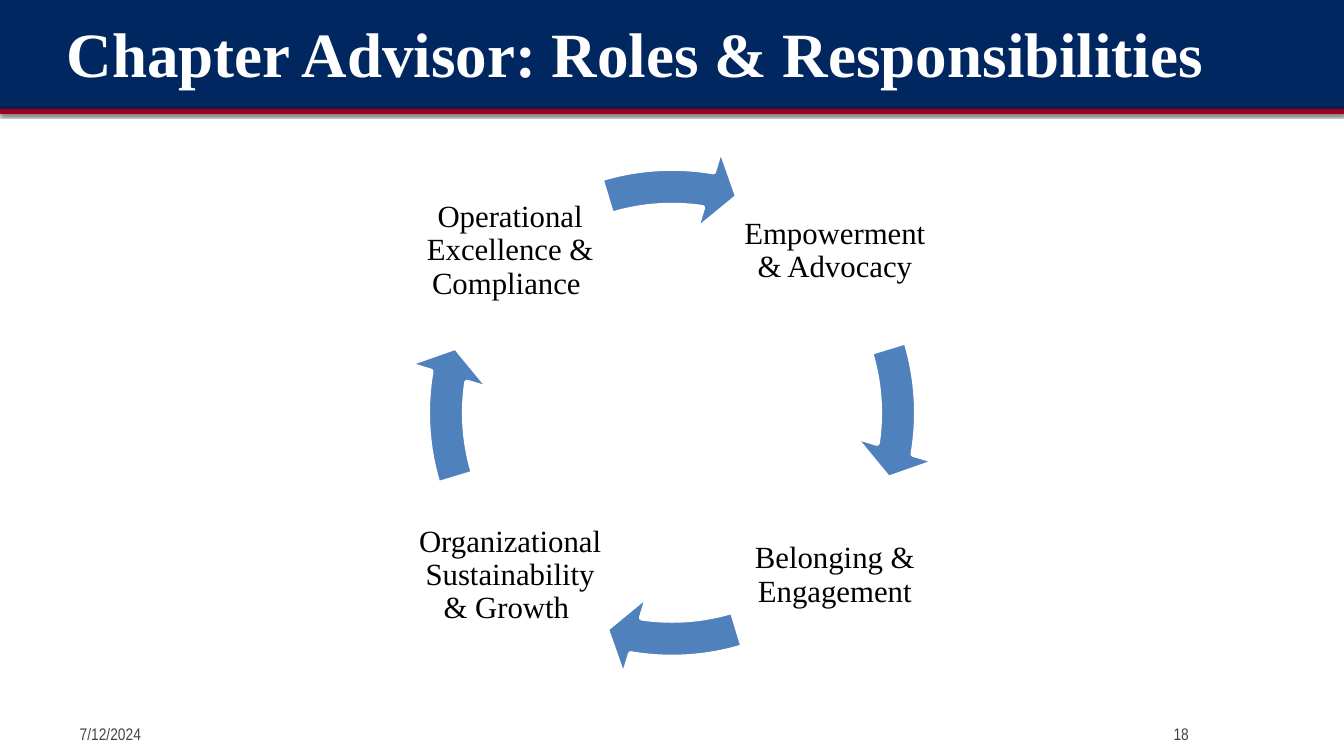
from lxml import etree
from pptx import Presentation
from pptx.dml.color import RGBColor
from pptx.enum import shapes, text
from pptx.oxml import ns
from pptx.util import Inches, Pt

NAVY = RGBColor(0x00, 0x27, 0x60)
RED = RGBColor(0xA0, 0x00, 0x1F)
BLUE = RGBColor(0x4F, 0x81, 0xBD)
GREY = RGBColor(0x45, 0x45, 0x45)
WHITE = RGBColor(0xFF, 0xFF, 0xFF)
BLACK = RGBColor(0x00, 0x00, 0x00)
SERIF, NARROW = "Times New Roman", "Arial Narrow"

HEADING = "Chapter Advisor: Roles & Responsibilities"
ROLES = [
    "Empowerment & Advocacy",
    "Belonging & Engagement",
    "Organizational Sustainability & Growth ",
    "Operational Excellence & Compliance ",
]
BANDS = [(0, 1.08, NAVY), (1.08, 0.05, RED)]
DATE, PAGE = "7/12/2024", "18"

SLIDE_W, SLIDE_H = 13.33, 7.5
RING_LEFT, RING_TOP, RING_SIZE = 3.99, 1.42, 5.35
ROLE_SIZE = 1.9
RIGHT, LEFT, UPPER, LOWER = 7.33, 4.11, 1.54, 4.76
ROLE_SPOTS = [(RIGHT, UPPER), (RIGHT, LOWER), (LEFT, LOWER), (LEFT, UPPER)]
QUARTER_TURN, FULL_TURN = 54, 216
HEAD_ANGLE, TAIL_ANGLE = 5.495, 205.852


def box(*lengths):
    return [Inches(length) for length in lengths]


def write(holder, words, *, size, color, font=SERIF, bold=False, spacing=1.0,
          align=text.PP_ALIGN.LEFT, anchor=text.MSO_ANCHOR.MIDDLE,
          insets=(0.03, 0.03, 0.03, 0.03)):
    """Put formatted words into a shape."""
    frame = holder.text_frame
    frame.word_wrap = True
    frame.auto_size = text.MSO_AUTO_SIZE.NONE
    frame.vertical_anchor = anchor
    (frame.margin_left, frame.margin_top,
     frame.margin_right, frame.margin_bottom) = box(*insets)
    paragraph = frame.paragraphs[0]
    paragraph.alignment = align
    paragraph.line_spacing = spacing
    run = paragraph.add_run()
    run.text = words
    run.font.name, run.font.size, run.font.bold = font, Pt(size), bold
    run.font.color.rgb = color


def add_band(slide, top, height, color):
    """Add a full-width band behind the heading."""
    band = slide.shapes.add_shape(shapes.MSO_SHAPE.RECTANGLE, *box(0, top, SLIDE_W, height))
    band.shadow.inherit = False
    band.fill.solid()
    band.fill.fore_color.rgb = color
    band.line.fill.background()
    slide.shapes.title.element.addprevious(band.element)
    return band


def cast_shadow(band):
    """Give a band a soft shadow below it."""
    effects = band.element.spPr.find(ns.qn("a:effectLst"))
    shadow = etree.SubElement(effects, ns.qn("a:outerShdw"), blurRad=str(Pt(2.5)),
                              dist=str(Pt(0.8)), dir="5400000", rotWithShape="0")
    tint = etree.SubElement(shadow, ns.qn("a:srgbClr"), val=str(BLACK))
    etree.SubElement(tint, ns.qn("a:alpha"), val="60000")


def add_cycle_arrow(slide, step):
    """Add the ring arrow that follows the given role."""
    arrow = slide.shapes.add_shape(shapes.MSO_SHAPE.CIRCULAR_ARROW,
                                   *box(RING_LEFT, RING_TOP, RING_SIZE, RING_SIZE))
    turn = step * QUARTER_TURN
    settings = (0.069, 4.653, HEAD_ANGLE + turn, (TAIL_ANGLE + turn) % FULL_TURN, 0.081)
    for index, setting in enumerate(settings):
        arrow.adjustments[index] = setting
    arrow.shadow.inherit = False
    arrow.fill.solid()
    arrow.fill.fore_color.rgb = BLUE
    arrow.line.color.rgb = WHITE
    arrow.line.width = Pt(3.78)


def main():
    """Build the advisor roles slide."""
    deck = Presentation()
    deck.slide_width, deck.slide_height = box(SLIDE_W, SLIDE_H)
    slide = deck.slides.add_slide(deck.slide_layouts[5])

    heading = slide.shapes.title
    heading.left, heading.top, heading.width, heading.height = box(0.56, 0, 12, 1.04)
    write(heading, HEADING, size=45, color=WHITE, bold=True, insets=(0.1, 0.05, 0.05, 0.05))

    bands = [add_band(slide, *band) for band in BANDS]
    cast_shadow(bands[-1])

    for step, (role, spot) in enumerate(zip(ROLES, ROLE_SPOTS)):
        label = slide.shapes.add_textbox(*box(*spot, ROLE_SIZE, ROLE_SIZE))
        write(label, role, size=22, color=BLACK, spacing=0.9, align=text.PP_ALIGN.CENTER)
        add_cycle_arrow(slide, step)

    footers = [
        (DATE, 0.67, 3.11, text.PP_ALIGN.LEFT, (0.12, 0.05, 0.05, 0)),
        (PAGE, 10.78, 1.11, text.PP_ALIGN.RIGHT, (0.1, 0.05, 0.1, 0)),
    ]
    for words, left, width, align, insets in footers:
        footer = slide.shapes.add_textbox(*box(left, 7.08, width, 0.3))
        write(footer, words, size=12, color=GREY, font=NARROW, align=align,
              anchor=text.MSO_ANCHOR.BOTTOM, insets=insets)

    deck.save("out.pptx")


if __name__ == "__main__":
    main()
